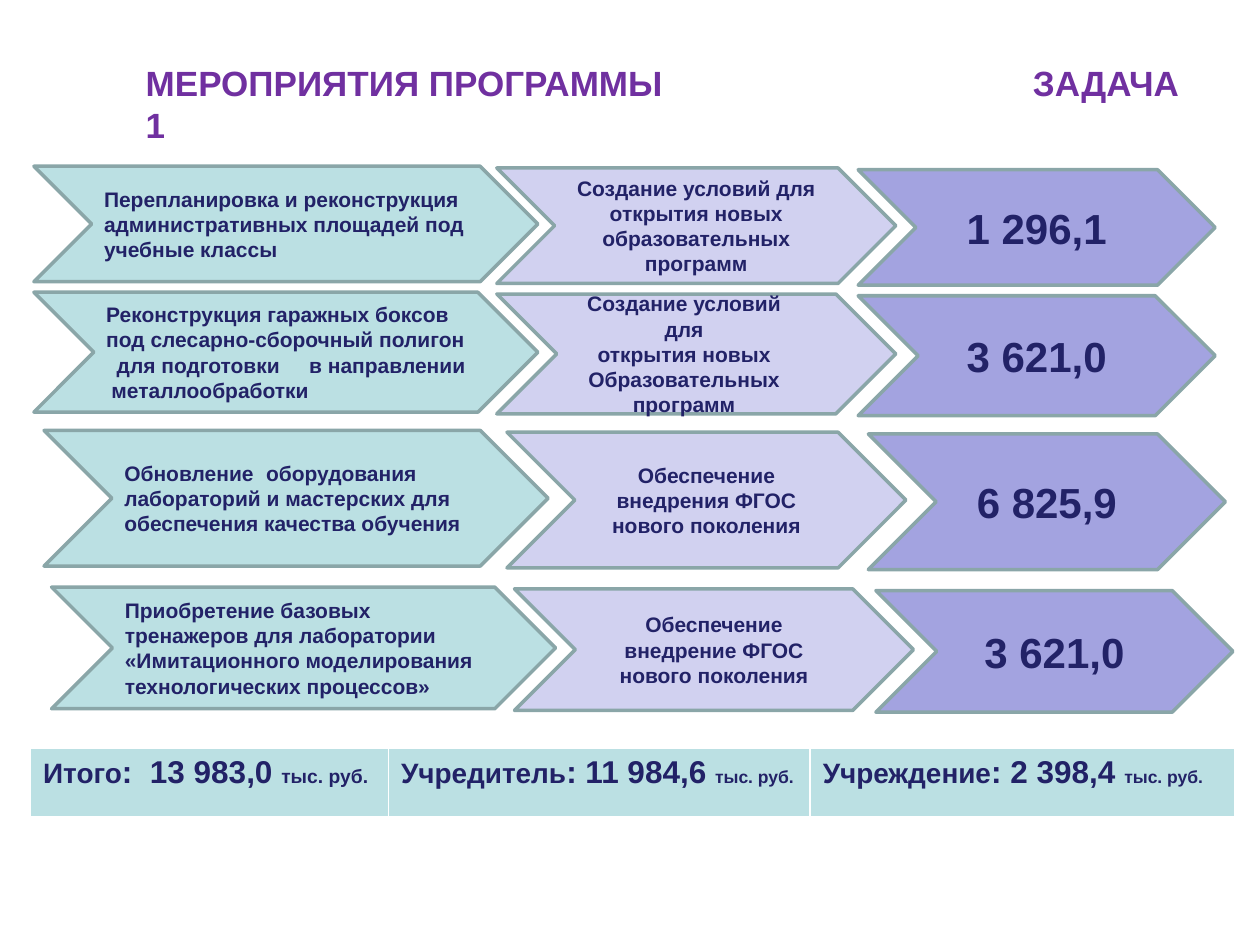
"""Build the slide of programme measures, goals and sums."""
from lxml.etree import SubElement
from pptx import Presentation
from pptx.dml.color import RGBColor
from pptx.enum.shapes import MSO_SHAPE
from pptx.enum.text import MSO_ANCHOR, PP_ALIGN
from pptx.oxml.ns import qn
from pptx.util import Pt

INK, EDGE, TITLE = "222267", "8AA6A8", "7030A0"
TINTS = ["BBE0E3", "D1D1F0", "A3A3E0"]
HEAD = [(33, 507, [("МЕРОПРИЯТИЯ ПРОГРАММЫ\tЗАДАЧА 1", 20)])]


def plain(*lines, size=12):
    """Make one simple paragraph of each line."""
    return [(0, 0, [(line, size)]) for line in lines]


ROWS = [
    (19.4, 95, 66,
     plain("Перепланировка и реконструкция административных площадей под учебные классы"),
     plain("Создание условий для открытия новых образовательных программ"),
     "1 296,1", 7.2),
    (19.4, 167, 68.5,
     plain("Реконструкция гаражных боксов под слесарно-сборочный полигон")
     + [(6, 110, [("для подготовки\tв направлении", 12)]),
        (3, 0, [("металлообработки", 12)])],
     plain("Создание условий для", "открытия новых", "Образовательных", "программ"),
     "3 621,0", 21),
    (25.2, 246, 77.5,
     [(0, 81, [("Обновление\tоборудования лабораторий и мастерских "
                "для обеспечения качества обучения", 12)])],
     plain("Обеспечение внедрения ФГОС нового поколения"),
     "6 825,9", 7.2),
    (29.5, 335.5, 69.5,
     plain("Приобретение базовых тренажеров для лаборатории "
           "«Имитационного моделирования технологических процессов»"),
     plain("Обеспечение внедрение ФГОС нового поколения"),
     "3 621,0", 7.2),
]
COLS = [(0, 288), (264.5, 228), (471, 204)]
SUMS = [
    (204.5, 61, [("Итого", 16), (":\t13 983,0 ", 18), ("тыс. руб.", 11)]),
    (241, 0, [("Учредитель", 16), (": 11 984,6 ", 18), ("тыс. руб.", 10)]),
    (242.5, 0, [("Учреждение", 16), (": 2 398,4 ", 18), ("тыс. руб.", 10)]),
]


def rgb(code):
    """Turn a hex string into a colour."""
    return RGBColor.from_string(code)


def paint(part, code):
    """Give a shape or cell a solid fill."""
    part.fill.solid()
    part.fill.fore_color.rgb = rgb(code)


def write(frame, paras, align=PP_ALIGN.LEFT, color=INK):
    """Fill a text frame with paragraphs, run by run."""
    frame.word_wrap = True
    for num, (indent, tab, runs) in enumerate(paras):
        para = frame.add_paragraph() if num else frame.paragraphs[0]
        para.alignment = align
        props = para._p.get_or_add_pPr()
        props.set("marL", str(Pt(indent)))
        if tab:
            stops = SubElement(props, qn("a:tabLst"))
            SubElement(stops, qn("a:tab"), pos=str(Pt(tab)), algn="l")
        for text, size in runs:
            run = para.add_run()
            run.text = text
            font = run.font
            font.name, font.size, font.bold = "Arial", Pt(size), True
            font.color.rgb = rgb(color)


def arrow(slide, box, tint, paras, align, inset):
    """Add one chevron with its text."""
    shape = slide.shapes.add_shape(MSO_SHAPE.CHEVRON, *map(Pt, box))
    shape.shadow.inherit = False
    paint(shape, tint)
    shape.line.color.rgb = rgb(EDGE)
    shape.line.width = Pt(2)
    frame = shape.text_frame
    frame.vertical_anchor = MSO_ANCHOR.MIDDLE
    frame.margin_right = Pt(inset)
    write(frame, paras, align)


def main():
    """Lay out the title, the chevrons and the totals."""
    deck = Presentation()
    deck.slide_width, deck.slide_height = Pt(720), Pt(540)
    slide = deck.slides.add_slide(deck.slide_layouts[6])

    title = slide.shapes.add_textbox(Pt(43.2), Pt(14), Pt(648), Pt(90))
    title.text_frame.vertical_anchor = MSO_ANCHOR.MIDDLE
    write(title.text_frame, HEAD, color=TITLE)

    for left, top, high, work, goal, cost, inset in ROWS:
        texts = [work, goal, plain(cost, size=24)]
        for num, ((shift, wide), tint, paras) in enumerate(zip(COLS, TINTS, texts)):
            align = PP_ALIGN.CENTER if num else PP_ALIGN.LEFT
            box = (left + shift, top + num, wide, high)
            arrow(slide, box, tint, paras, align, inset if num == 1 else 7.2)

    wide = sum(item[0] for item in SUMS)
    table = slide.shapes.add_table(1, len(SUMS), Pt(17.5), Pt(427.7), Pt(wide), Pt(39)).table
    for num, (size, tab, runs) in enumerate(SUMS):
        table.columns[num].width = Pt(size)
        cell = table.cell(0, num)
        paint(cell, TINTS[0])
        write(cell.text_frame, [(0, tab, runs)])

    deck.save("out.pptx")


if __name__ == "__main__":
    main()
